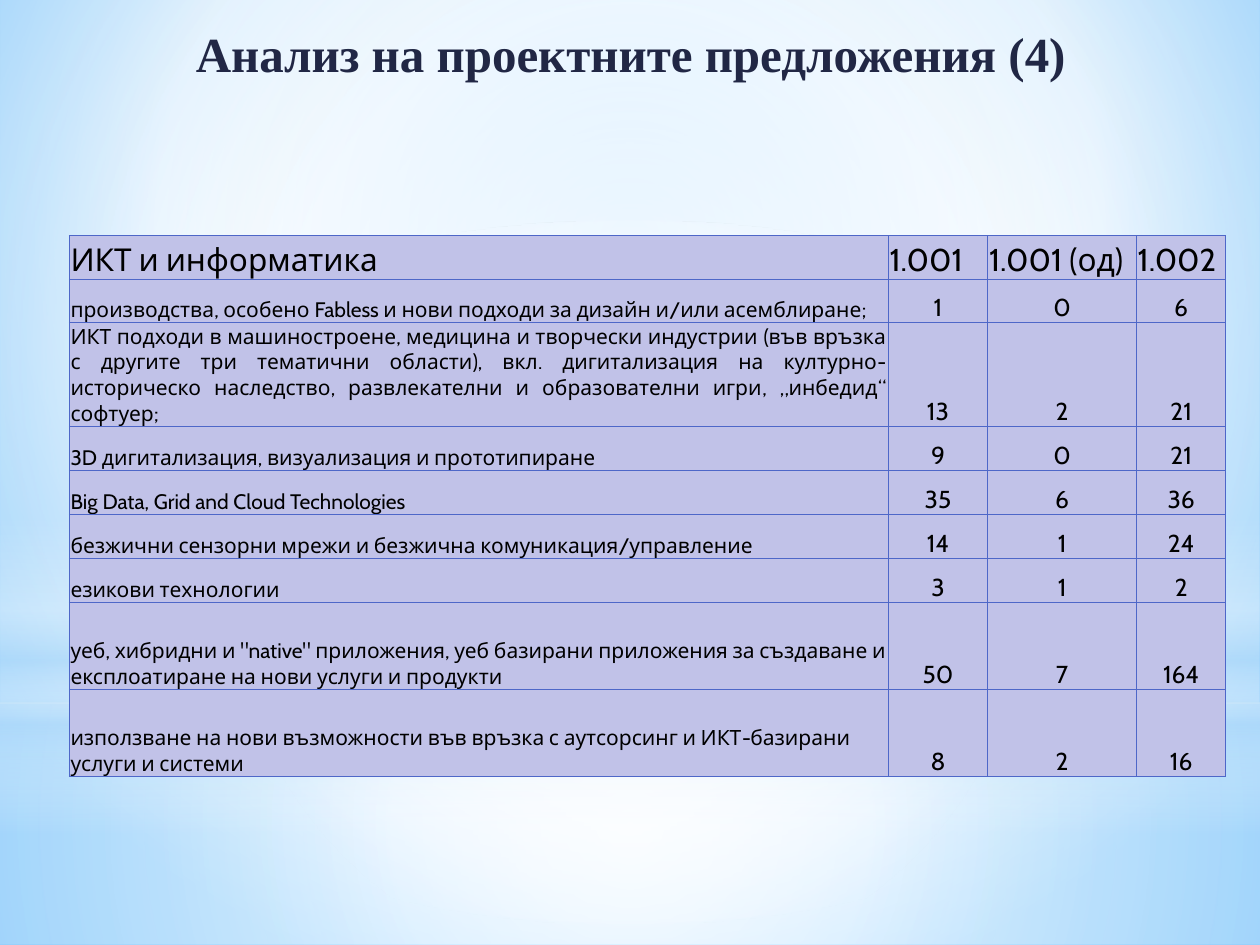
import pptx
import pptx.util
import pptx.dml.color
import pptx.enum.shapes
import pptx.enum.text
import pptx.oxml
import pptx.oxml.ns

Inches = pptx.util.Inches
RGBColor = pptx.dml.color.RGBColor
MSO_SHAPE = pptx.enum.shapes.MSO_SHAPE
MSO_ANCHOR = pptx.enum.text.MSO_ANCHOR
PP_ALIGN = pptx.enum.text.PP_ALIGN

WHITE = RGBColor(0xFF, 0xFF, 0xFF)
BLACK = RGBColor(0x00, 0x00, 0x00)
NAVY = RGBColor(0x21, 0x27, 0x45)
SKY = RGBColor(0x9E, 0xD5, 0xFF)
BRIGHT_BLUE = RGBColor(0x5B, 0xB9, 0xFF)
PALE_BLUE = RGBColor(0xB4, 0xDC, 0xFA)
LILAC = RGBColor(0xC1, 0xC2, 0xE8)
BORDER_BLUE = RGBColor(0x4E, 0x67, 0xC8)

CENTRE = (50, 50, 50, 50)
COLUMN_WIDTHS = (6.5, 0.79, 1.18, 0.71)
ROW_HEIGHTS = (0.35, 0.34, 0.65, 0.35, 0.35, 0.35, 0.35, 0.69, 0.69)
JUSTIFIED_ROWS = (1, 2)
ROWS = (
    ("ИКТ и информатика", "1.001", "1.001 (од)", "1.002"),
    ("производства, особено Fabless и нови подходи за дизайн и/или асемблиране;", "1", "0", "6"),
    ("ИКТ подходи в машиностроене, медицина и творчески индустрии (във връзка с другите три "
     "тематични области), вкл. дигитализация на културно-историческо наследство, "
     "развлекателни и образователни игри, „инбедид“ софтуер;", "13", "2", "21"),
    ("3D дигитализация, визуализация и прототипиране", "9", "0", "21"),
    ("Big Data, Grid and Cloud Technologies", "35", "6", "36"),
    ("безжични сензорни мрежи и безжична комуникация/управление", "14", "1", "24"),
    ("езикови технологии", "3", "1", "2"),
    ("уеб, хибридни и \"native\" приложения, уеб базирани приложения за създаване и "
     "експлоатиране на нови услуги и продукти", "50", "7", "164"),
    ("използване на нови възможности във връзка с аутсорсинг и ИКТ-базирани услуги и системи",
     "8", "2", "16"),
)


def set_gradient(fill, owner, stops, focus=None):
    fill.solid()
    stop_xml = "".join(
        f'<a:gs pos="{position * 1000}"><a:srgbClr val="{color}">'
        f'<a:alpha val="{opacity * 1000}"/></a:srgbClr></a:gs>'
        for position, color, opacity in stops)
    if focus:
        left, top, right, bottom = (value * 1000 for value in focus)
        direction = (f'<a:path path="circle"><a:fillToRect l="{left}" t="{top}" '
                     f'r="{right}" b="{bottom}"/></a:path>')
    else:
        direction = '<a:lin ang="5400000" scaled="0"/>'
    gradient = pptx.oxml.parse_xml(
        f'<a:gradFill {pptx.oxml.ns.nsdecls("a")} rotWithShape="1">'
        f'<a:gsLst>{stop_xml}</a:gsLst>{direction}</a:gradFill>')
    solid = owner.find(pptx.oxml.ns.qn("a:solidFill"))
    owner.replace(solid, gradient)


def add_glow(slide, box, kind, stops, focus=None):
    shape = slide.shapes.add_shape(kind, *map(Inches, box))
    shape.shadow.inherit = False
    shape.line.fill.background()
    set_gradient(shape.fill, shape.element.spPr, stops, focus)


def build_backdrop(slide, width, height):
    fill = slide.background.fill
    fill.solid()
    properties = slide.element.find(".//" + pptx.oxml.ns.qn("p:bgPr"))
    set_gradient(fill, properties,
                 [(0, SKY, 100), (60, WHITE, 100), (100, BRIGHT_BLUE, 100)], (20, 10, 20, 60))
    horizon = 5.58
    add_glow(slide, (0, horizon, width, height - horizon), MSO_SHAPE.RECTANGLE,
             [(0, WHITE, 91), (37, WHITE, 76), (100, PALE_BLUE, 79)], CENTRE)
    add_glow(slide, (0, 0, width, horizon), MSO_SHAPE.RECTANGLE,
             [(0, WHITE, 89), (48, WHITE, 62), (100, PALE_BLUE, 79)], CENTRE)
    add_glow(slide, (0, 4.12, width, 2.5), MSO_SHAPE.RECTANGLE,
             [(0, WHITE, 0), (29, WHITE, 30), (45, PALE_BLUE, 40),
              (55, WHITE, 26), (65, PALE_BLUE, 60), (100, WHITE, 0)])
    add_glow(slide, (0, 1.75, width, horizon), MSO_SHAPE.OVAL,
             [(0, WHITE, 100), (56, WHITE, 0)], CENTRE)


def add_run(paragraph, text, size, font, color, bold=False):
    run = paragraph.add_run()
    run.text = text
    run.font.size = pptx.util.Pt(size)
    run.font.name = font
    run.font.bold = bold
    run.font.color.rgb = color


def build_title(slide, box):
    title = slide.shapes.title
    title.left, title.top, title.width, title.height = map(Inches, box)
    title.text_frame.vertical_anchor = MSO_ANCHOR.MIDDLE
    paragraph = title.text_frame.paragraphs[0]
    paragraph.alignment = PP_ALIGN.CENTER
    add_run(paragraph, "Анализ на проектните предложения (4)", 28, "Times New Roman", NAVY, True)
    slide.shapes.element.append(title.element)


def set_borders(cell):
    properties = cell._tc.get_or_add_tcPr()
    for index, side in enumerate(("lnL", "lnR", "lnT", "lnB")):
        properties.insert(index, pptx.oxml.parse_xml(
            f'<a:{side} {pptx.oxml.ns.nsdecls("a")} w="{pptx.util.Pt(0.75)}">'
            f'<a:solidFill><a:srgbClr val="{BORDER_BLUE}"/></a:solidFill></a:{side}>'))


def fill_cell(cell, text, size, alignment):
    cell.fill.solid()
    cell.fill.fore_color.rgb = LILAC
    set_borders(cell)
    cell.vertical_anchor = MSO_ANCHOR.BOTTOM
    cell.margin_left = cell.margin_right = cell.margin_top = Inches(0.01)
    cell.margin_bottom = 0
    paragraph = cell.text_frame.paragraphs[0]
    paragraph.alignment = alignment
    add_run(paragraph, text, size, "Cabin", BLACK)


def build_table(slide, box):
    frame = slide.shapes.add_table(len(ROWS), len(COLUMN_WIDTHS), *map(Inches, box))
    table = frame.table
    table.first_row = False
    table.horz_banding = False
    for column, width in zip(table.columns, COLUMN_WIDTHS):
        column.width = Inches(width)
    for row_index, texts in enumerate(ROWS):
        table.rows[row_index].height = Inches(ROW_HEIGHTS[row_index])
        for column_index, text in enumerate(texts):
            if row_index == 0:
                size, alignment = 18, PP_ALIGN.LEFT
            elif column_index > 0:
                size, alignment = 14, PP_ALIGN.CENTER
            else:
                size = 12
                alignment = PP_ALIGN.JUSTIFY if row_index in JUSTIFIED_ROWS else PP_ALIGN.LEFT
            fill_cell(table.cell(row_index, column_index), text, size, alignment)


def main():
    presentation = pptx.Presentation()
    presentation.slide_width = Inches(10)
    presentation.slide_height = Inches(7.5)
    slide = presentation.slides.add_slide(presentation.slide_layouts[5])
    build_backdrop(slide, 10, 7.5)
    build_title(slide, (0.2, 0, 9.61, 0.84))
    build_table(slide, (0.55, 1.87, sum(COLUMN_WIDTHS), sum(ROW_HEIGHTS)))
    presentation.save("out.pptx")


if __name__ == "__main__":
    main()
